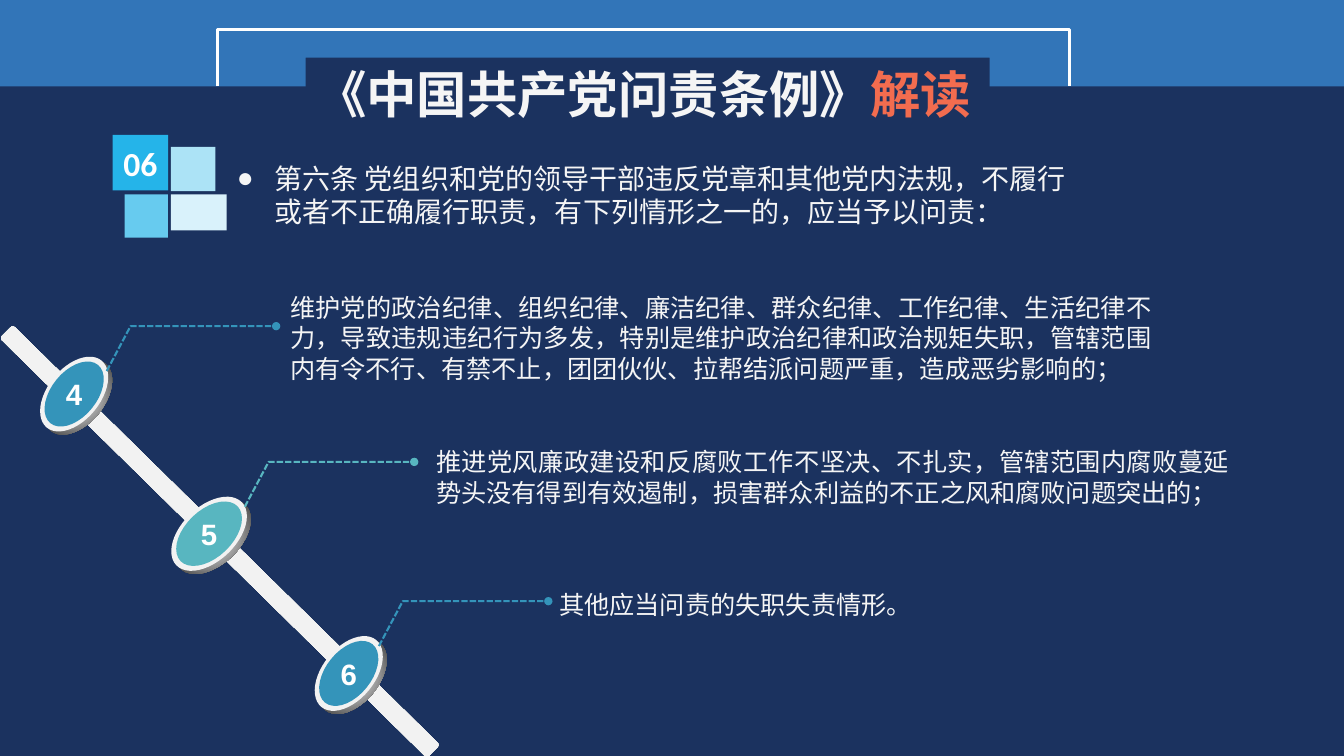
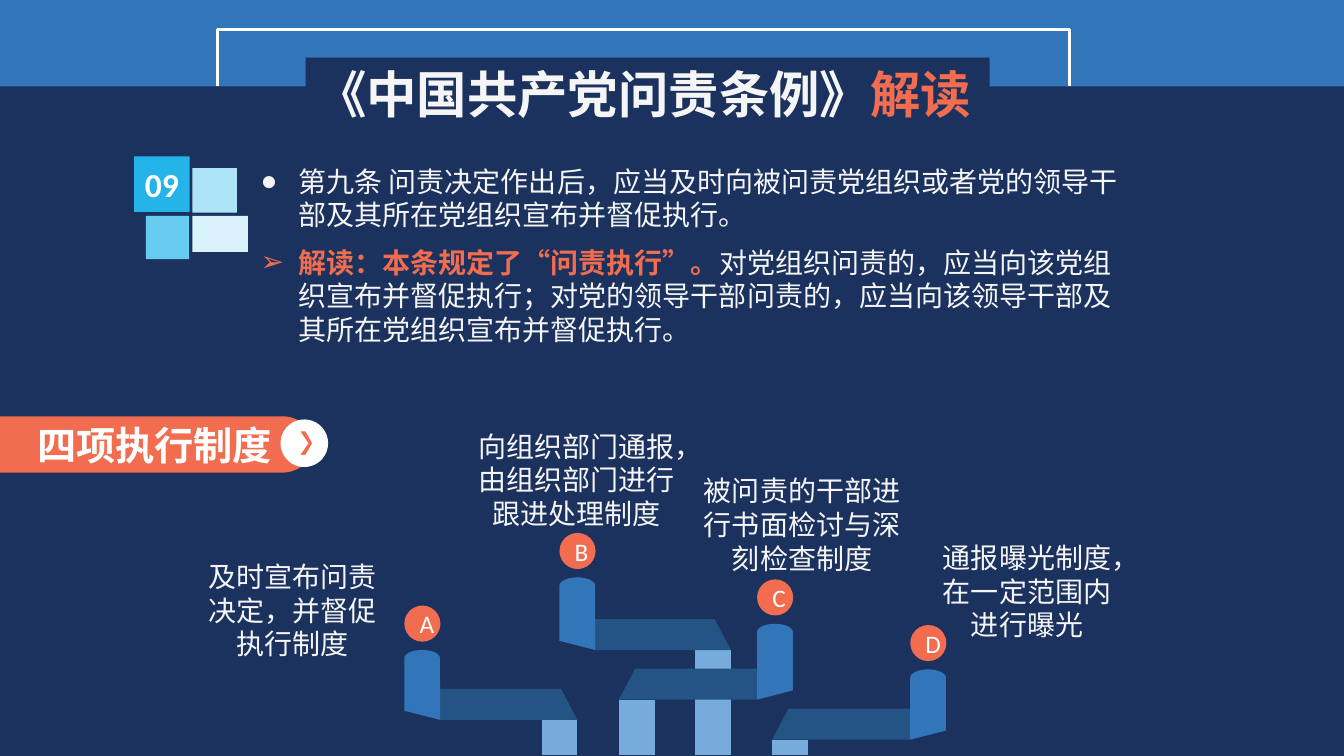
import math
from typing import NamedTuple, Optional

import pptx
import pptx.dml.color
import pptx.enum.dml
import pptx.enum.shapes
import pptx.enum.text
import pptx.oxml
import pptx.oxml.ns
import pptx.util
from lxml import etree

Cm, Pt = pptx.util.Cm, pptx.util.Pt
MSO = pptx.enum.shapes.MSO_SHAPE
ALIGN = pptx.enum.text.PP_ALIGN
ANCHOR = pptx.enum.text.MSO_ANCHOR
qn = pptx.oxml.ns.qn

# Shared look
NAVY, BLUE, CORAL, PALE, WHITE = "1B325F", "3275B8", "F26C4F", "F5F5F5", "FFFFFF"
TEAL, AQUA, RIM = "3494BA", "58B6C0", "F2F2F2"
DESK, LEG = "245484", "76ABDC"
CJK = "Noto Sans CJK SC"
SLIDE_W, SLIDE_H = 33.87, 19.05
Point = tuple[float, float]


class Run(NamedTuple):
    text: str
    size: float
    color: str = PALE
    bold: bool = False
    font: str = CJK


class Para(NamedTuple):
    runs: list[Run]
    align: Optional[int] = None
    bullet: str = ""
    spacing: Optional[float] = None


class Square(NamedTuple):
    dx: float
    dy: float
    w: float
    h: float
    color: str


class Disc(NamedTuple):
    label: str
    cx: float
    cy: float
    w: float
    h: float
    angle: float
    color: str
    leader: Point
    box: tuple[float, float, float, float]
    text: str


class Worker(NamedTuple):
    label: str
    x: float
    top: float
    bottom: float
    desk_end: float
    box: tuple[float, float, float]
    text: str


SQUARES = [
    Square(0, 0, 1.4, 1.4, "25B4E9"),
    Square(1.47, 0.3, 1.12, 1.12, "ACE3F6"),
    Square(0.3, 1.5, 1.09, 1.09, "67CBEF"),
    Square(1.47, 1.5, 1.4, 0.91, "D9F2FB"),
]
DISCS = [
    Disc("6", 8.79, 16.97, 2.18, 1.32, 309.2, TEAL, (9.55, 16.28),
         (13.84, 14.35, 11.13, 1.78), "其他应当问责的失职失责情形。"),
    Disc("4", 1.87, 9.93, 2.18, 1.32, 309.2, TEAL, (2.69, 9.35),
         (7.06, 7.34, 22.23, 2.34),
         "维护党的政治纪律、组织纪律、廉洁纪律、群众纪律、工作纪律、生活纪律不力，导致违规违纪行为多发，"
         "特别是维护政治纪律和政治规矩失职，管辖范围内有令不行、有禁不止，团团伙伙、拉帮结派问题严重，造成恶劣影响的；"),
    Disc("5", 5.27, 13.45, 2.29, 1.37, 316.2, AQUA, (6.17, 12.77),
         (10.74, 11.13, 20.5, 1.78),
         "推进党风廉政建设和反腐败工作不坚决、不扎实，管辖范围内腐败蔓延势头没有得到有效遏制，"
         "损害群众利益的不正之风和腐败问题突出的；"),
]
WORKERS = [
    Worker("D", 22.94, 16.87, 18.64, 19.46, (23.27, 14, 5.23), "通报曝光制度，在一定范围内进行曝光"),
    Worker("A", 10.19, 16.38, 18.14, 14.55, (4.85, 14.48, 5.05), "及时宣布问责决定，并督促执行制度"),
    Worker("B", 14.1, 14.55, 16.38, 18.42, (11.73, 11.2, 5.61), "向组织部门通报，由组织部门进行跟进处理制度"),
    Worker("C", 19.08, 15.72, 17.63, 15.6, (17.42, 12.32, 5.59), "被问责的干部进行书面检讨与深刻检查制度"),
]


# Drawing helpers
def rgb(value: str) -> pptx.dml.color.RGBColor:
    return pptx.dml.color.RGBColor.from_string(value)


def paint(sp, color: Optional[str]) -> None:
    sp.shadow.inherit = False
    sp.line.fill.background()
    if color:
        sp.fill.solid()
        sp.fill.fore_color.rgb = rgb(color)
    else:
        sp.fill.background()


def gradient(sp, stops: list[tuple], angle: Optional[int] = None) -> None:
    """Fill with (position, colour, opacity) stops; radial when no angle is given."""
    sp.fill.gradient()
    grad = sp._element.spPr.find(qn("a:gradFill"))
    for child in list(grad):
        grad.remove(child)
    gs_list = etree.SubElement(grad, qn("a:gsLst"))
    for pos, color, opacity in stops:
        gs = etree.SubElement(gs_list, qn("a:gs"), pos=str(pos * 1000))
        clr = etree.SubElement(gs, qn("a:srgbClr"), val=color)
        if opacity < 100:
            etree.SubElement(clr, qn("a:alpha"), val=str(opacity * 1000))
    if angle is None:
        radial = etree.SubElement(grad, qn("a:path"), path="circle")
        etree.SubElement(radial, qn("a:fillToRect"), dict.fromkeys("ltrb", "50000"))
    else:
        etree.SubElement(grad, qn("a:lin"), ang=str(angle * 60000), scaled="0")


def add_preset(s, kind, x: float, y: float, w: float, h: float, color: Optional[str], angle: float = 0):
    sp = s.shapes.add_shape(kind, Cm(x), Cm(y), Cm(w), Cm(h))
    paint(sp, color)
    sp.rotation = angle
    return sp


def add_outline(s, *contours: list[Point], color: Optional[str] = None, close: bool = True):
    paths = [[(Cm(x), Cm(y)) for x, y in c] for c in contours]
    fb = s.shapes.build_freeform(*paths[0][0])
    fb.add_line_segments(paths[0][1:], close=close)
    for pts in paths[1:]:
        fb.move_to(*pts[0])
        fb.add_line_segments(pts[1:], close=close)
    sp = fb.convert_to_shape()
    paint(sp, color)
    return sp


def set_line(sp, color: str, width: float) -> None:
    sp.line.color.rgb = rgb(color)
    sp.line.width = Pt(width)


def arc(cx: float, cy: float, rx: float, ry: float, start: float = 0, end: float = 360,
        turn: float = 0, steps: int = 36) -> list[Point]:
    c, n = math.cos(math.radians(turn)), math.sin(math.radians(turn))
    pts = []
    for i in range(steps + 1):
        t = math.radians(start + (end - start) * i / steps)
        u, v = rx * math.cos(t), ry * math.sin(t)
        pts.append((cx + u * c - v * n, cy + u * n + v * c))
    return pts


def write(sp, paras: list[Para], **frame) -> None:
    tf = sp.text_frame
    for key, value in ({"word_wrap": True} | frame).items():
        setattr(tf, key, value)
    for i, para in enumerate(paras):
        p = tf.add_paragraph() if i else tf.paragraphs[0]
        if para.bullet:
            pPr = p._p.get_or_add_pPr()
            indent = Cm(0.95)
            pPr.set("marL", str(indent))
            pPr.set("indent", str(-indent))
            etree.SubElement(pPr, qn("a:buFont"), typeface="Arial")
            etree.SubElement(pPr, qn("a:buChar"), char=para.bullet)
            if i:
                p.space_before = Pt(10)
        for key, value in {"alignment": para.align, "line_spacing": para.spacing}.items():
            if value is not None:
                setattr(p, key, value)
        for run in para.runs:
            r = p.add_run()
            r.text = run.text
            fmt = {"size": Pt(run.size), "bold": run.bold, "name": run.font}
            for key, value in fmt.items():
                setattr(r.font, key, value)
            r.font.color.rgb = rgb(run.color)
            etree.SubElement(r._r.get_or_add_rPr(), qn("a:ea"), typeface=run.font)


def label(sp, run: Run, **frame) -> None:
    write(sp, [Para([run], ALIGN.CENTER)], vertical_anchor=ANCHOR.MIDDLE, **frame)


def add_text(s, x: float, y: float, w: float, h: float, paras: list[Para], **frame) -> None:
    write(s.shapes.add_textbox(Cm(x), Cm(y), Cm(w), Cm(h)), paras, **frame)


# Parts common to both slides
def add_base(prs, number: str, x: float, y: float):
    s = prs.slides.add_slide(prs.slide_layouts[6])
    s.background.fill.solid()
    s.background.fill.fore_color.rgb = rgb(NAVY)
    band, notch = 2.18, 1.45
    add_outline(s, [(0, 0), (SLIDE_W, 0), (SLIDE_W, band), (24.94, band), (24.94, notch),
                    (7.7, notch), (7.7, band), (0, band)], color=BLUE)
    frame = add_outline(s, [(5.49, band), (5.49, 0.74), (26.95, 0.74), (26.95, band)], close=False)
    set_line(frame, WHITE, 2.25)
    title = [Run("《中国共产党问责条例》", 36, bold=True), Run("解读", 36, CORAL, True)]
    add_text(s, 6.22, 0.99, 20, 2.26, [Para(title, ALIGN.CENTER, spacing=1.2)],
             vertical_anchor=ANCHOR.BOTTOM)
    for i, q in enumerate(SQUARES):
        sp = add_preset(s, MSO.RECTANGLE, x + q.dx, y + q.dy, q.w, q.h, q.color)
        if i == 0:
            label(sp, Run(number, 24, WHITE, True, "Calibri"), word_wrap=False)
    return s


# Numbered disc with its dashed leader
def add_disc(s, d: Disc) -> None:
    def ellipse(dx: float, dy: float, w: float, color: Optional[str] = None):
        return add_preset(s, MSO.OVAL, d.cx + dx - w / 2, d.cy + dy - d.h / 2, w, d.h, color, d.angle)

    gradient(ellipse(0.1, 0.08, d.w), [(0, RIM, 100), (62, "595959", 100), (82, "404040", 100)])
    gradient(ellipse(0.05, 0.06, d.w - 0.18), [(0, PALE, 20), (62, "595959", 0), (82, "404040", 0)], 270)
    ellipse(0, 0, d.w, RIM)
    x, y = d.leader
    leader = add_outline(s, [(x, y), (x + 0.6, y - 1.13), (x + 4.27, y - 1.13)], close=False)
    set_line(leader, d.color, 1.5)
    leader.line.dash_style = pptx.enum.dml.MSO_LINE.SQUARE_DOT
    etree.SubElement(leader.line._get_or_add_ln(), qn("a:tailEnd"), type="oval")
    scale = 0.87 / 2
    face = add_outline(s, arc(d.cx, d.cy, d.w * scale, d.h * scale, turn=d.angle), color=d.color)
    label(face, Run(d.label, 21, WHITE, True, "Arial"))


# Figure at a desk
def add_worker(s, k: Worker) -> None:
    width, desk_h, slant, cap, skew = 0.9, 0.78, 0.41, 0.21, 0.23
    side = 1 if k.desk_end > k.x else -1
    inner = k.x + width if side > 0 else k.x
    outer = inner - side * width
    desk_top, end = k.bottom - desk_h, k.desk_end
    inset = end - side * width
    add_outline(s, [(inset, k.bottom), (end, k.bottom), (end, SLIDE_H - 0.03), (inset, SLIDE_H - 0.03)],
                color=LEG)
    add_outline(s, [(inner, desk_top), (end - side * slant, desk_top), (end, k.bottom), (inner, k.bottom)],
                color=DESK)
    top = arc(k.x + width / 2, k.top + cap, side * width / 2, cap, 180, 360)
    add_outline(s, top + [(inner, k.bottom), (outer, k.bottom - skew)], color=BLUE)
    head = add_preset(s, MSO.OVAL, k.x, k.top - 1.12, 0.91, 0.91, CORAL)
    label(head, Run(k.label, 18, "FEFFFF", font="Calibri"))


def build_article_six(prs) -> None:
    s = add_base(prs, "06", 2.84, 3.4)
    body = Run("第六条 党组织和党的领导干部违反党章和其他党内法规，不履行或者不正确履行职责，有下列情形之一的，应当予以问责：", 20)
    add_text(s, 5.72, 3.94, 21.79, 1.96, [Para([body], bullet="●")])
    bar = add_preset(s, MSO.ROUNDED_RECTANGLE, 5.31, 6.1, 0.46, 15.09, None, 314.5)
    gradient(bar, [(9, "D0D0D0", 100), (34, RIM, 100)], 180)
    for d in DISCS:
        add_disc(s, d)
    for d in DISCS:
        add_text(s, *d.box, [Para([Run(d.text, 18)], ALIGN.JUSTIFY)], vertical_anchor=ANCHOR.MIDDLE)


def build_article_nine(prs) -> None:
    s = add_base(prs, "09", 3.38, 3.94)
    article = Run("第九条 问责决定作出后，应当及时向被问责党组织或者党的领导干部及其所在党组织宣布并督促执行。", 20)
    reading = [
        Run("解读：本条规定了“问责执行”。", 20, CORAL, True),
        Run("对党组织问责的，应当向该党组织宣布并督促执行；对党的领导干部问责的，"
            "应当向该领导干部及其所在党组织宣布并督促执行。", 20),
    ]
    add_text(s, 6.32, 4.01, 22.38, 4.88, [Para([article], bullet="●"), Para(reading, bullet="➢")])
    for k in WORKERS:
        add_worker(s, k)
    for k in WORKERS:
        add_text(s, *k.box, 1.78, [Para([Run(k.text, 20)], ALIGN.CENTER)], vertical_anchor=ANCHOR.MIDDLE)
    # Section banner and its round arrow with a cut-out chevron
    banner = add_outline(s, [(-0.1, 10.49)] + arc(7.11, 11.2, 0.79, 0.71, -90, 90) + [(-0.1, 11.91)],
                         color=CORAL)
    label(banner, Run("四项执行制度", 28, WHITE, True),
          **dict.fromkeys(("margin_left", "margin_top", "margin_right", "margin_bottom"), 0))
    chevron = [(7.57, 10.87), (7.77, 11.17), (7.57, 11.46), (7.7, 11.46), (7.87, 11.17), (7.7, 10.87)]
    add_outline(s, chevron, arc(7.67, 11.17, 0.6, 0.6), color=WHITE)


def main() -> None:
    prs = pptx.Presentation()
    prs.slide_width, prs.slide_height = Cm(SLIDE_W), Cm(SLIDE_H)
    build_article_six(prs)
    build_article_nine(prs)
    prs.save("out.pptx")


if __name__ == "__main__":
    main()
